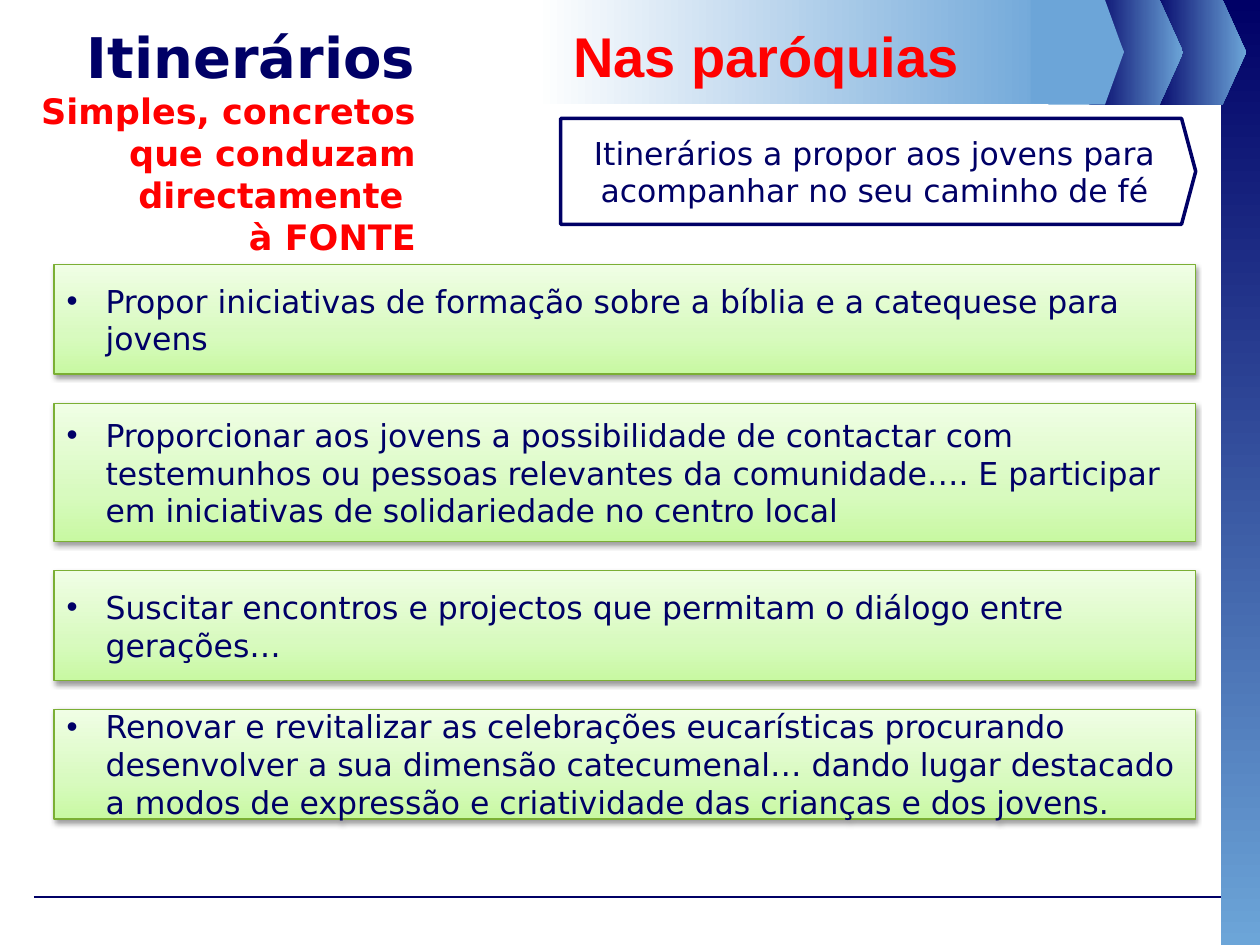
import copy

import pptx
import pptx.dml.color
import pptx.enum.shapes
import pptx.enum.text
import pptx.util
from lxml import etree
from pptx.oxml.ns import qn
from pptx.util import Inches, Pt

COLORS = {
    "navy": "000066", "sky": "6CA5D8", "white": "FFFFFF", "red": "FF0000",
    "lime": "C8F9A2", "pale_lime": "D8FABF", "mist": "F0FEE5",
    "green": "7BAF34", "black": "000000",
}
BODY_FONT = "DejaVu Sans"
HEADING_FONT = "Arial"

TITLE_LINES = [
    ("Itinerários", 32, "navy"),
    ("Simples, concretos que conduzam directamente ", 20, "red"),
    ("à FONTE", 20, "red"),
]
SETTING = "Nas paróquias"
PURPOSE = "Itinerários a propor aos jovens para acompanhar no seu caminho de fé"
PROPOSALS = [
    ("Propor iniciativas de formação sobre a bíblia e a catequese para jovens", 0.87),
    ("Proporcionar aos jovens a possibilidade de contactar com testemunhos ou pessoas "
     "relevantes da comunidade…. E participar em iniciativas de solidariedade no centro local", 1.1),
    ("Suscitar encontros e projectos que permitam o diálogo entre gerações…", 0.87),
    ("Renovar e revitalizar as celebrações eucarísticas procurando desenvolver a sua dimensão "
     "catecumenal… dando lugar destacado a modos de expressão e criatividade das crianças e dos jovens.", 0.87),
]
PROPOSAL_LEFT, PROPOSAL_TOP, PROPOSAL_WIDTH, PROPOSAL_GAP = 0.43, 2.1, 9.06, 0.23

NAVY_TO_SKY = [(0, "navy"), (1, "sky")]
WHITE_TO_SKY = [(0, "white"), (1, "sky")]
LIME_TO_MIST = [(0, "lime"), (0.35, "pale_lime"), (1, "mist")]
RECT = pptx.enum.shapes.MSO_SHAPE.RECTANGLE
ARROW = pptx.enum.shapes.MSO_SHAPE.PENTAGON
DECORATION = [
    (RECT, (9.69, 0, 0.31, 7.5), NAVY_TO_SKY, 270),
    (ARROW, (9.14, 0, 0.75, 0.83), NAVY_TO_SKY, 0),
    (ARROW, (8.64, 0, 0.75, 0.83), NAVY_TO_SKY, 0),
    (ARROW, (8.32, 0, 0.6, 0.83), "sky", 0),
    (RECT, (4.25, 0, 4.18, 0.83), WHITE_TO_SKY, 0),
    (ARROW, (8.18, 0, 0.74, 0.82), "sky", 0),
]


def rgb(name):
    return pptx.dml.color.RGBColor.from_string(COLORS[name])


def paint(shape, fill, angle):
    if isinstance(fill, str):
        shape.fill.solid()
        shape.fill.fore_color.rgb = rgb(fill)
        return
    shape.fill.gradient()
    shape.fill.gradient_angle = angle
    stop_list = shape._element.spPr.find(".//" + qn("a:gsLst"))
    for _ in fill[2:]:
        stop_list.append(copy.deepcopy(stop_list[0]))
    for stop, (position, color) in zip(shape.fill.gradient_stops, fill):
        stop.position = position
        stop.color.rgb = rgb(color)


def add_block(slide, kind, box, fill, angle=0, outline=None, outline_width=0.75, point=0.25):
    block = slide.shapes.add_shape(kind, *map(Inches, box))
    block.shadow.inherit = False
    if kind == ARROW:
        block.adjustments[0] = point
    paint(block, fill, angle)
    if outline:
        block.line.color.rgb = rgb(outline)
        block.line.width = Pt(outline_width)
    else:
        block.line.fill.background()
    return block


def add_run(paragraph, text, size, color, font=BODY_FONT, bold=False):
    run = paragraph.add_run()
    run.text = text
    run.font.size = Pt(size)
    run.font.name = font
    run.font.bold = bold
    run.font.color.rgb = rgb(color)


def write(shape, text, align):
    frame = shape.text_frame
    frame.word_wrap = True
    frame.vertical_anchor = pptx.enum.text.MSO_ANCHOR.MIDDLE
    paragraph = frame.paragraphs[0]
    paragraph.alignment = align
    add_run(paragraph, text, 18, "navy")
    return paragraph


def add_bullet(paragraph):
    properties = paragraph._p.get_or_add_pPr()
    properties.set("marL", str(Inches(0.31)))
    properties.set("indent", str(-Inches(0.31)))
    etree.SubElement(properties, qn("a:buFont"), typeface=HEADING_FONT)
    etree.SubElement(properties, qn("a:buChar"), char="•")


def add_drop_shadow(shape):
    effects = shape._element.spPr.find(qn("a:effectLst"))
    shadow = etree.SubElement(
        effects, qn("a:outerShdw"), blurRad=str(Pt(3.1)), dist=str(Pt(1.6)),
        dir="5400000", rotWithShape="0")
    color = etree.SubElement(shadow, qn("a:srgbClr"), val=COLORS["black"])
    etree.SubElement(color, qn("a:alpha"), val="38000")


def main():
    align = pptx.enum.text.PP_ALIGN
    deck = pptx.Presentation()
    deck.slide_width, deck.slide_height = Inches(10), Inches(7.5)
    slide = deck.slides.add_slide(deck.slide_layouts[5])

    rule = slide.shapes.add_connector(
        pptx.enum.shapes.MSO_CONNECTOR.STRAIGHT,
        Inches(0.27), Inches(7.12), Inches(9.69), Inches(7.12))
    rule.line.color.rgb = rgb("navy")
    rule.line.width = Pt(0.75)
    etree.SubElement(rule._element.spPr, qn("a:effectLst"))

    for kind, box, fill, angle in DECORATION:
        add_block(slide, kind, box, fill, angle)

    title = slide.shapes.title
    title.left, title.top, title.width, title.height = map(Inches, (-0.04, -0.03, 3.44, 2.28))
    title.text_frame.word_wrap = True
    title.text_frame.auto_size = pptx.enum.text.MSO_AUTO_SIZE.NONE
    title.text_frame.vertical_anchor = pptx.enum.text.MSO_ANCHOR.MIDDLE
    heading = title.text_frame.paragraphs[0]
    heading.alignment = align.RIGHT
    for index, (text, size, color) in enumerate(TITLE_LINES):
        if index:
            heading.add_line_break()
        add_run(heading, text, size, color, bold=True)

    purpose = add_block(slide, ARROW, (4.45, 0.94, 5.04, 0.84), "white",
                        outline="navy", outline_width=2, point=0.134)
    write(purpose, PURPOSE, align.CENTER)

    setting = slide.shapes.add_textbox(*map(Inches, (4.45, 0.12, 4.49, 0.64)))
    setting.text_frame.word_wrap = True
    setting.text_frame.auto_size = pptx.enum.text.MSO_AUTO_SIZE.SHAPE_TO_FIT_TEXT
    add_run(setting.text_frame.paragraphs[0], SETTING, 32, "red", HEADING_FONT, True)

    top = PROPOSAL_TOP
    for text, height in PROPOSALS:
        proposal = add_block(slide, RECT, (PROPOSAL_LEFT, top, PROPOSAL_WIDTH, height),
                             LIME_TO_MIST, 90, outline="green")
        add_drop_shadow(proposal)
        add_bullet(write(proposal, text, align.LEFT))
        top += height + PROPOSAL_GAP

    deck.save("out.pptx")


if __name__ == "__main__":
    main()
